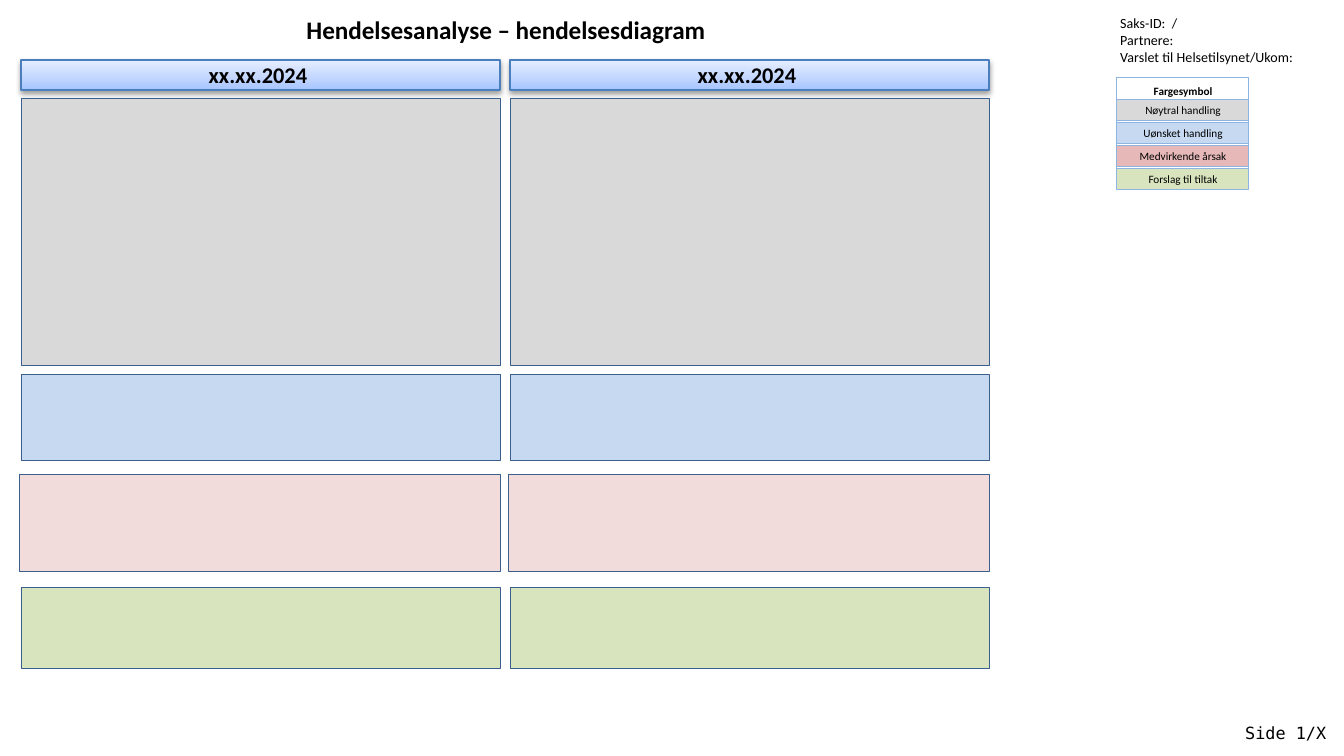
from pptx import Presentation
from pptx.dml.color import RGBColor
from pptx.enum.shapes import MSO_SHAPE as Shape
from pptx.enum.text import MSO_ANCHOR as Anchor, MSO_AUTO_SIZE as AutoSize, PP_ALIGN as Align
from pptx.oxml import parse_xml
from pptx.oxml.ns import nsdecls
from pptx.util import Emu, Pt

PX = 6804  # EMU per px, 134.4 px to the inch
SANS = "Calibri"
MONO = "DejaVu Sans Mono"

COLUMN_LEFTS = (21, 510)
COLUMN_WIDTH = 479
# top, height, fill, overhang on the left
BANDS = (
    (99, 267, "D9D9D9", 0),
    (374, 86, "C6D9F1", 0),
    (474, 98, "F2DCDB", 2),
    (587, 81, "D7E4BD", 0),
)
LEGEND = (
    ("Nøytral handling", "D9D9D9"),
    ("Uønsket handling", "C6D9F1"),
    ("Medvirkende årsak", "E6B9B8"),
    ("Forslag til tiltak", "D7E4BD"),
)
HEADER_STOPS = ((0, "A4C4FF"), (35, "BFD4FF"), (100, "E6EEFF"))


def px(*lengths):
    return [Emu(length * PX) for length in lengths]


def color(hex_code):
    return RGBColor.from_string(hex_code)


def write(shape, text, size, font=SANS, bold=False, align=Align.LEFT, anchor=Anchor.TOP):
    frame = shape.text_frame
    frame.word_wrap = True
    frame.vertical_anchor = anchor
    frame.text = text
    for paragraph in frame.paragraphs:
        paragraph.alignment = align
        paragraph.font.name = font
        paragraph.font.size = Pt(size)
        paragraph.font.bold = bold
        paragraph.font.color.rgb = color("000000")


def add_box(shapes, bounds, fill, line, line_width=0.5, kind=Shape.FLOWCHART_PROCESS):
    box = shapes.add_shape(kind, *px(*bounds))
    box.shadow.inherit = False
    if fill:
        box.fill.solid()
        box.fill.fore_color.rgb = color(fill)
    box.line.color.rgb = color(line)
    box.line.width = Pt(line_width)
    return box


def add_label(shapes, bounds, text, size, font=SANS):
    label = shapes.add_textbox(*px(*bounds))
    write(label, text, size, font)


def add_title(slide):
    title = slide.shapes.title
    title.left, title.top, title.width, title.height = px(293, 8, 499, 58)
    write(title, "Hendelsesanalyse – hendelsesdiagram", 13.5, bold=True)
    title.text_frame.auto_size = AutoSize.NONE


def add_date_header(shapes, left):
    """Add a date bar with a three-stop gradient and a soft shadow."""
    header = add_box(shapes, (left, 60, COLUMN_WIDTH, 30), None, "4B7EBC", 0.75)
    stops = "".join(
        f'<a:gs pos="{position * 1000}"><a:srgbClr val="{code}"/></a:gs>'
        for position, code in HEADER_STOPS
    )
    properties = header._element.spPr
    properties.insert(2, parse_xml(
        f'<a:gradFill {nsdecls("a")} rotWithShape="1"><a:gsLst>{stops}</a:gsLst>'
        '<a:lin ang="16200000" scaled="0"/></a:gradFill>'
    ))
    properties.find("{*}effectLst").append(parse_xml(
        f'<a:outerShdw {nsdecls("a")} blurRad="{Pt(3.1)}" dist="{Pt(1.6)}" dir="5400000" '
        'rotWithShape="0"><a:srgbClr val="000000"><a:alpha val="38000"/></a:srgbClr></a:outerShdw>'
    ))
    write(header, "xx.xx.2024 ", 12, bold=True, align=Align.CENTER, anchor=Anchor.MIDDLE)


def add_day_column(shapes, left):
    add_date_header(shapes, left)
    for top, height, fill, overhang in BANDS:
        bounds = (left - overhang, top, COLUMN_WIDTH + overhang, height)
        add_box(shapes, bounds, fill, "3A5F8C")


def add_legend(shapes):
    legend = shapes.add_group_shape().shapes
    frame = add_box(legend, (1117, 78, 132, 111), "FFFFFF", "8EB4E3", kind=Shape.RECTANGLE)
    write(frame, "Fargesymbol", 6, bold=True, align=Align.CENTER)
    for row, (meaning, fill) in enumerate(LEGEND):
        entry = add_box(legend, (1117, 99 + 23 * row, 132, 21), fill, "8EB4E3")
        write(entry, meaning, 6, align=Align.CENTER, anchor=Anchor.MIDDLE)


def main():
    deck = Presentation()
    deck.slide_width, deck.slide_height = px(1344, 756)
    slide = deck.slides.add_slide(deck.slide_layouts[5])
    shapes = slide.shapes

    add_title(slide)
    for left in COLUMN_LEFTS:
        add_day_column(shapes, left)
    add_legend(shapes)
    add_label(shapes, (1107, 8, 207, 82),
              "Saks-ID:  /\nPartnere:\nVarslet til Helsetilsynet/Ukom:", 7.5)
    add_label(shapes, (1232, 716, 121, 34), "Side 1/X", 9, MONO)

    deck.save("out.pptx")


if __name__ == "__main__":
    main()
